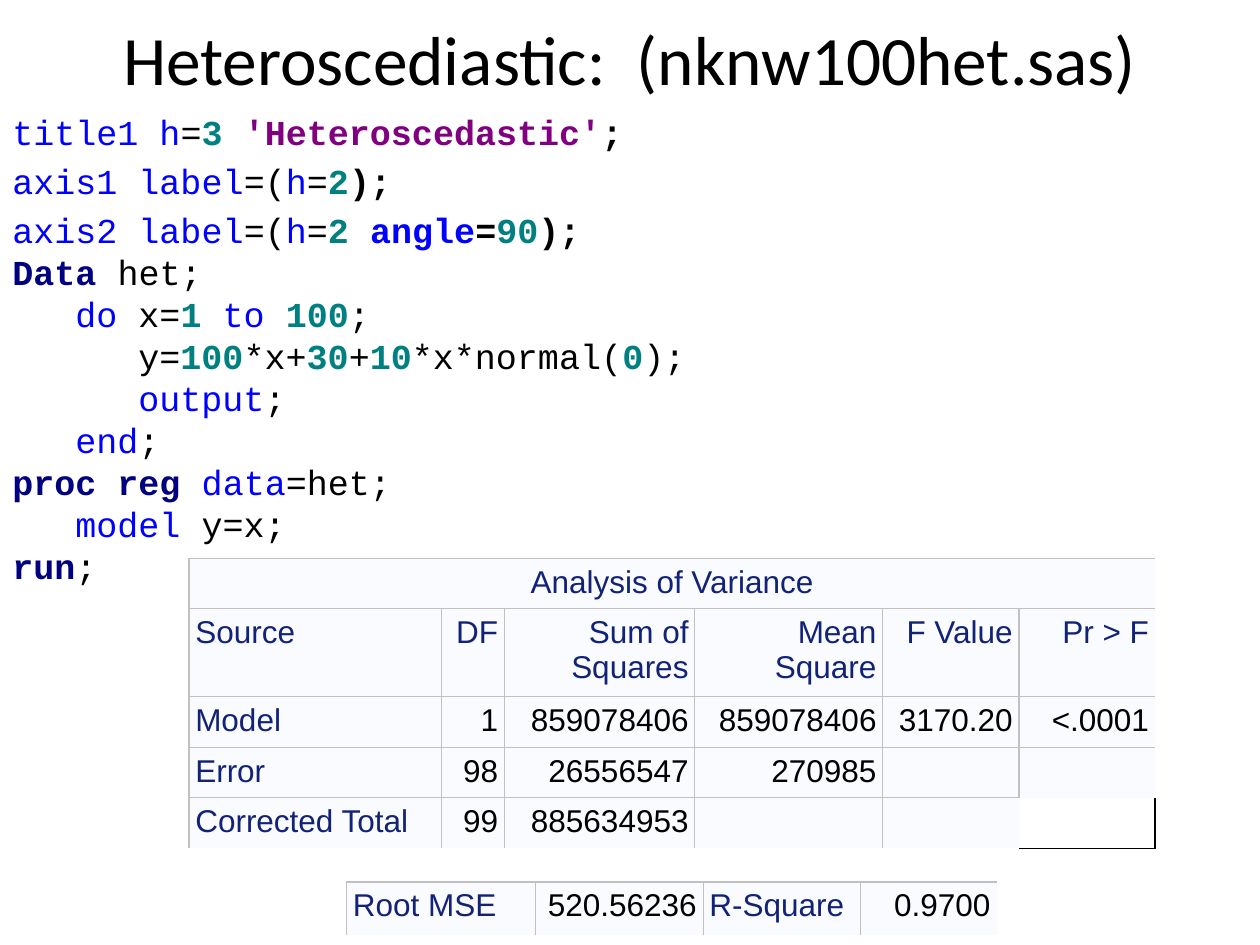
import pptx
import pptx.dml.color
import pptx.enum.text
import pptx.oxml
import pptx.oxml.ns
import pptx.util

BLACK = pptx.dml.color.RGBColor(0x00, 0x00, 0x00)
BLUE = pptx.dml.color.RGBColor(0x00, 0x00, 0xFF)
TEAL = pptx.dml.color.RGBColor(0x00, 0x80, 0x80)
PURPLE = pptx.dml.color.RGBColor(0x80, 0x00, 0x80)
NAVY = pptx.dml.color.RGBColor(0x00, 0x00, 0x80)
LABEL = pptx.dml.color.RGBColor(0x11, 0x22, 0x77)
CELL_FILL = pptx.dml.color.RGBColor(0xFA, 0xFB, 0xFE)
GRID_LINE = pptx.dml.color.RGBColor(0xC1, 0xC1, 0xC1)

ALIGN = pptx.enum.text.PP_ALIGN
WIDTH = pptx.util.Inches(10)
HEIGHT = pptx.util.Inches(7.5)
INDENT = pptx.util.Inches(0.5)
CELL_MARGIN = pptx.util.Inches(0.05)

STYLES = {
    "plain": (BLACK, False),
    "strong": (BLACK, True),
    "keyword": (BLUE, False),
    "option": (BLUE, True),
    "number": (TEAL, True),
    "string": (PURPLE, True),
    "step": (NAVY, True),
}

OPTION_LINES = [
    [("title1 h", "keyword"), ("=", "plain"), ("3 ", "number"),
     ("'Heteroscedastic'", "string"), (";", "strong")],
    [("axis1 label", "keyword"), ("=(", "plain"), ("h", "keyword"), ("=", "plain"),
     ("2", "number"), (");", "strong")],
    [("axis2 label", "keyword"), ("=(", "plain"), ("h", "keyword"), ("=", "plain"),
     ("2 ", "number"), ("angle", "option"), ("=", "strong"), ("90", "number"),
     (");", "strong")],
]
STEP_LINES = [
    (0, [("Data ", "step"), ("het;", "plain")]),
    (1, [("do", "keyword"), (" x=", "plain"), ("1 ", "number"), ("to ", "keyword"),
         ("100", "number"), (";", "plain")]),
    (2, [("y=", "plain"), ("100", "number"), ("*x+", "plain"), ("30", "number"),
         ("+", "plain"), ("10", "number"), ("*x*normal(", "plain"), ("0", "number"),
         (");", "plain")]),
    (2, [("output", "keyword"), (";", "plain")]),
    (1, [("end", "keyword"), (";", "plain")]),
    (0, [("proc reg ", "step"), ("data", "keyword"), ("=het;", "plain")]),
    (1, [("model", "keyword"), (" y=x;", "plain")]),
    (0, [("run", "step"), (";", "plain")]),
]
CODE = [(0, 4, runs) for runs in OPTION_LINES] + [(level, 0, runs) for level, runs in STEP_LINES]

VARIANCE = [
    ["Analysis of Variance", "", "", "", "", ""],
    ["Source", "DF", "Sum of\vSquares", "Mean\vSquare", "F Value", "Pr\u00a0>\u00a0F".replace("\u00a0", " ")],
    ["Model", "1", "859078406", "859078406", "3170.20", "<.0001"],
    ["Error", "98", "26556547", "270985", "", ""],
    ["Corrected Total", "99", "885634953", "", "", ""],
]
FIT = [["Root MSE", "520.56236", "R-Square", "0.9700"]]


def share_box(left, top, width, height):
    """Turn percentages of the slide's size into lengths."""
    return (int(WIDTH * left / 100), int(HEIGHT * top / 100),
            int(WIDTH * width / 100), int(HEIGHT * height / 100))


def set_format(target, values):
    """Set every named attribute on the target."""
    for name, value in values.items():
        setattr(target, name, value)


def set_font(run, name, size, color, bold=False):
    """Format one run of text."""
    set_format(run.font, {"name": name, "size": pptx.util.Pt(size), "bold": bold})
    run.font.color.rgb = color


def add_title(slide, box, text):
    """Place the slide title in its placeholder."""
    title = slide.shapes.title
    set_format(title, dict(zip(("left", "top", "width", "height"), box)))
    title.text_frame.vertical_anchor = pptx.enum.text.MSO_ANCHOR.MIDDLE
    paragraph = title.text_frame.paragraphs[0]
    paragraph.text = text
    paragraph.alignment = ALIGN.CENTER
    set_font(paragraph.runs[0], "Calibri", 39.6, BLACK)


def add_code(slide, box, lines):
    """Write the coloured program listing, one paragraph a line."""
    frame = slide.shapes.add_textbox(*box).text_frame
    frame.word_wrap = True
    for index, (level, gap, runs) in enumerate(lines):
        paragraph = frame.add_paragraph() if index else frame.paragraphs[0]
        set_format(paragraph, {"space_before": pptx.util.Pt(gap),
                               "line_spacing": pptx.util.Pt(24)})
        paragraph._p.get_or_add_pPr().set("marL", str(level * INDENT))
        for text, style in runs:
            run = paragraph.add_run()
            run.text = text
            set_font(run, "Courier New", 20, *STYLES[style])


def set_borders(cell, colors):
    """Draw the left, right, top and bottom cell lines; None hides a line."""
    properties = cell._tc.get_or_add_tcPr()
    for index, (side, color) in enumerate(zip("LRTB", colors)):
        paint = "<a:noFill/>"
        if color is not None:
            paint = f'<a:solidFill><a:srgbClr val="{color}"/></a:solidFill>'
        width = pptx.util.Pt(1 if color == BLACK else 0.75)
        namespace = pptx.oxml.ns.nsdecls("a")
        line = pptx.oxml.parse_xml(f'<a:ln{side} {namespace} w="{width}">{paint}</a:ln{side}>')
        properties.insert(index, line)


def add_grid(slide, box, rows, column_weights, row_weights, label_rows=0, label_columns=(0,)):
    """Add a table whose columns and rows share the given box by weight."""
    frame = slide.shapes.add_table(len(rows), len(column_weights), *box)
    table = frame.table
    set_format(table, {"first_row": False, "horz_banding": False})
    for column, weight in zip(table.columns, column_weights):
        column.width = int(box[2] * weight / sum(column_weights))
    for row, weight in zip(table.rows, row_weights):
        row.height = int(box[3] * weight / sum(row_weights))
    for row_index, row in enumerate(rows):
        for column_index, text in enumerate(row):
            cell = table.cell(row_index, column_index)
            margins = ("margin_left", "margin_right", "margin_top", "margin_bottom")
            set_format(cell, dict.fromkeys(margins, CELL_MARGIN))
            cell.fill.solid()
            cell.fill.fore_color.rgb = CELL_FILL
            right = GRID_LINE if column_index < len(row) - 1 else None
            bottom = GRID_LINE if row_index < len(rows) - 1 else None
            set_borders(cell, (GRID_LINE, right, GRID_LINE, bottom))
            paragraph = cell.text_frame.paragraphs[0]
            paragraph.text = text
            is_label = column_index in label_columns
            paragraph.alignment = ALIGN.LEFT if is_label else ALIGN.RIGHT
            color = LABEL if is_label or row_index < label_rows else BLACK
            for run in paragraph.runs:
                set_font(run, "Arial", 18, color)
    return table


def add_variance_table(slide, box):
    """Add the analysis of variance with its heading and open corner."""
    table = add_grid(slide, box, VARIANCE, (2, 0.5, 1.51, 1.49, 1.08, 1.08),
                     (0.38, 0.67, 0.38, 0.39, 0.4), label_rows=2)
    heading = table.cell(0, 0)
    heading.merge(table.cell(0, 5))
    heading.text_frame.paragraphs[0].alignment = ALIGN.CENTER
    table.cell(4, 5).fill.background()
    for row, column, colors in (
        (0, 0, (GRID_LINE, None, GRID_LINE, GRID_LINE)),
        (3, 5, (GRID_LINE, None, GRID_LINE, None)),
        (4, 4, (GRID_LINE, None, GRID_LINE, None)),
        (4, 5, (None, BLACK, None, BLACK)),
    ):
        cell = table.cell(row, column)
        properties = cell._tc.get_or_add_tcPr()
        for side in "LRTB":
            properties.remove(properties.find(pptx.oxml.ns.qn(f"a:ln{side}")))
        set_borders(cell, colors)


def main():
    """Build and save the slide."""
    presentation = pptx.Presentation()
    set_format(presentation, {"slide_width": WIDTH, "slide_height": HEIGHT})
    slide = presentation.slides.add_slide(presentation.slide_layouts[5])
    add_title(slide, share_box(5, 0, 90, 12.27), "Heteroscediastic:  (nknw100het.sas)")
    add_code(slide, share_box(0, 11.07, 100, 52.27), CODE)
    add_variance_table(slide, share_box(15, 59.07, 76.7, 29.6))
    add_grid(slide, share_box(27.5, 93.33, 51.6, 5.6), FIT, (1.5, 1.33, 1.25, 1.08), (1,),
             label_columns=(0, 2))
    presentation.save("out.pptx")


if __name__ == "__main__":
    main()
